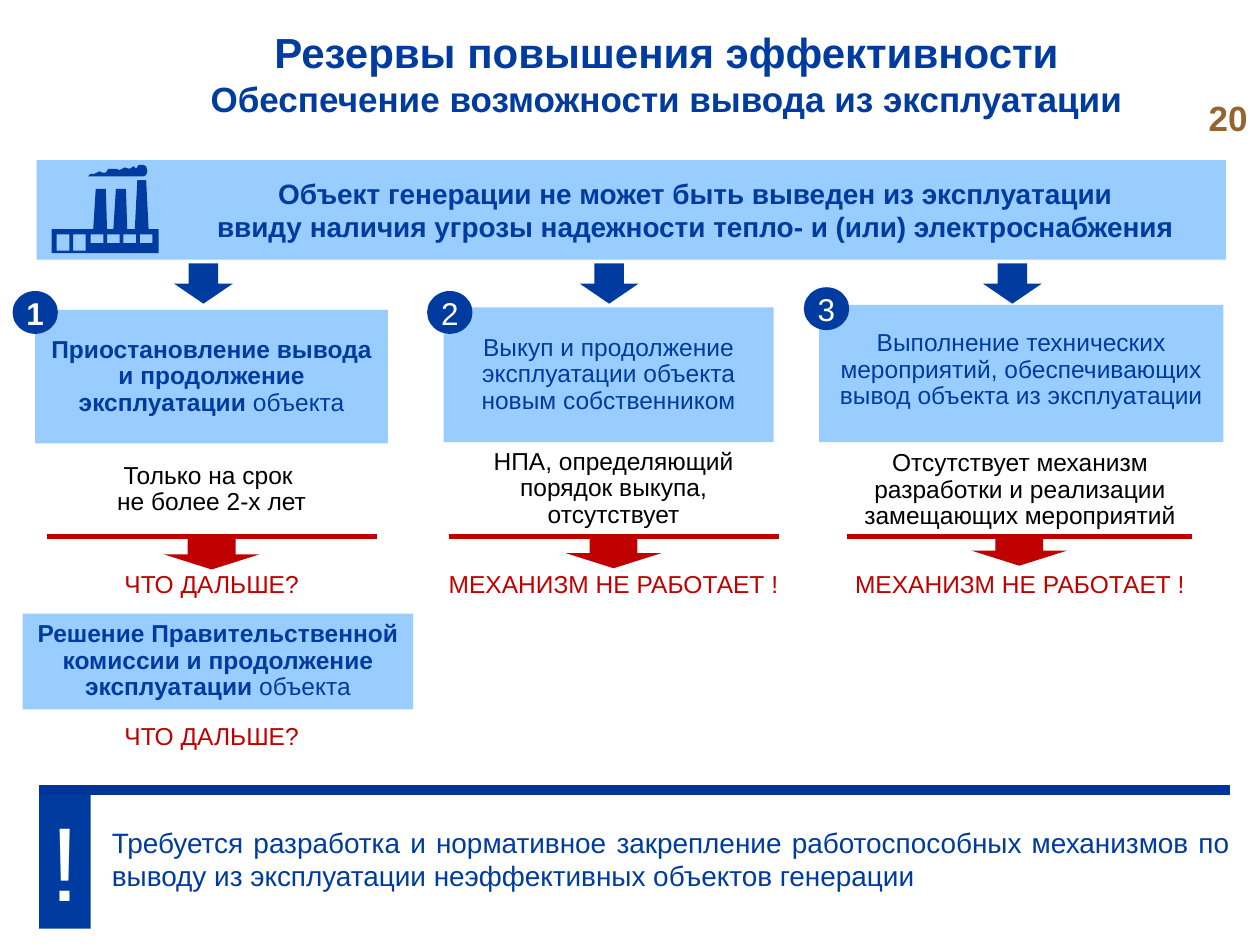
"""Build the slide on reserves for decommissioning generation facilities."""
import pptx
import pptx.dml.color
import pptx.enum.shapes
import pptx.enum.text
import pptx.util
from lxml import etree

Inches = pptx.util.Inches
Shape = pptx.enum.shapes.MSO_SHAPE
Align = pptx.enum.text.PP_ALIGN
Anchor = pptx.enum.text.MSO_ANCHOR

BLUE, SKY, RED, WHITE = "003CA0", "99CCFF", "C00000", "FFFFFF"
TIGHT = (0.08, 0.05, 0.08, 0.05)
NORMAL = (0.1, 0.05, 0.1, 0.05)
NONE = (0, 0, 0, 0)

SMOKE = [
    (98, 140), (114, 140), (116, 139), (117, 136), (116, 132), (114, 131),
    (110, 131), (108, 134), (106, 132), (103, 134), (99, 133), (95, 135),
    (92, 134), (86, 134), (84, 137), (81, 137), (79, 136), (75, 138),
    (72, 138), (70, 140),
]
BUILDING = [
    (41, 182), (74, 182), (76, 150), (84, 150), (85, 182), (90, 182),
    (92, 150), (100, 150), (101, 182), (107, 182), (109, 143), (116, 143),
    (118, 182), (126, 182), (126, 201), (41, 201),
]
WINDOWS = [
    (45, 199), (58, 199), (72, 193), (85, 193), (98, 193), (111, 193),
]


def color(value):
    """Turn a hex string into a colour."""
    return pptx.dml.color.RGBColor.from_string(value)


def write(box, lines, size, ink, bold=False, align=Align.CENTER,
          anchor=Anchor.MIDDLE, insets=TIGHT, spacing=None):
    """Fill a box with paragraphs and return the last one."""
    frame = box.text_frame
    frame.word_wrap = True
    frame.vertical_anchor = anchor
    (frame.margin_left, frame.margin_top,
     frame.margin_right, frame.margin_bottom) = map(Inches, insets)
    for index, line in enumerate(lines):
        para = frame.paragraphs[0] if index == 0 else frame.add_paragraph()
        para.text = line
        para.alignment = align
        if spacing:
            para.line_spacing = spacing
        para.font.name = "Arial"
        para.font.size = pptx.util.Pt(size)
        para.font.bold = bold
        para.font.color.rgb = color(ink)
    return para


def add_filled(page, kind, place, fill):
    """Add a preset shape with a plain fill and no outline."""
    shape = page.shapes.add_shape(kind, *map(Inches, place))
    shape.shadow.inherit = False
    shape.fill.solid()
    shape.fill.fore_color.rgb = color(fill)
    shape.line.fill.background()
    return shape


def add_text(page, place, lines, size, ink, **style):
    """Add a text box and return its last paragraph."""
    box = page.shapes.add_textbox(*map(Inches, place))
    return write(box, lines, size, ink, **style)


def add_panel(page, place, text, size=14, plain_end=None, **style):
    """Add a light blue panel, with an optional ending that is not bold."""
    panel = add_filled(page, Shape.RECTANGLE, place, SKY)
    para = write(panel, [text], size, BLUE, **style)
    if plain_end:
        span = para.add_run()
        span.text = plain_end
        span.font.bold = False


def add_rule(page, left, right, top, ink, width):
    """Add a horizontal line."""
    rule = page.shapes.add_connector(
        pptx.enum.shapes.MSO_CONNECTOR.STRAIGHT,
        Inches(left), Inches(top), Inches(right), Inches(top))
    rule.line.color.rgb = color(ink)
    rule.line.width = pptx.util.Pt(width)
    etree.SubElement(rule.element.spPr, pptx.oxml.ns.qn("a:effectLst"))


def add_badge(page, left, top, number, bold):
    """Add a numbered circle."""
    badge = add_filled(page, Shape.OVAL, (left, top, 0.36, 0.34), BLUE)
    write(badge, [number], 18, WHITE, bold=bold, insets=NONE)


def add_verdict(page, place, text):
    """Add a red conclusion."""
    add_text(page, place, [text], 14, RED, anchor=Anchor.TOP, insets=NORMAL)


def add_plant(page):
    """Draw the power plant, in hundredths of an inch."""
    windows = [[(x, 186), (x + 10, 186), (x + 10, bottom), (x, bottom)]
               for x, bottom in WINDOWS]
    builder = page.shapes.build_freeform(*SMOKE[0], scale=Inches(0.01))
    builder.add_line_segments(SMOKE[1:], close=True)
    for outline in [BUILDING, *windows]:
        builder.move_to(*outline[0])
        builder.add_line_segments(outline[1:], close=True)
    plant = builder.convert_to_shape()
    plant.shadow.inherit = False
    plant.fill.solid()
    plant.fill.fore_color.rgb = color(BLUE)
    plant.line.fill.background()


def add_heading(page):
    """Add the title, the page number and the top band."""
    title = add_text(page, (1.22, 0, 8.14, 1.16),
                     ["Резервы повышения эффективности\v"], 24, BLUE,
                     bold=True, insets=NORMAL)
    span = title.add_run()
    span.text = "Обеспечение возможности вывода из эксплуатации"
    span.font.size = pptx.util.Pt(20)
    add_text(page, (9.37, 0.6, 0.63, 0.55), ["20"], 20, "95642F", bold=True,
             align=Align.RIGHT, anchor=Anchor.BOTTOM, insets=NORMAL)
    add_panel(page, (0.29, 1.27, 9.44, 0.79),
              "Объект генерации не может быть выведен из эксплуатации\v"
              "ввиду наличия угрозы надежности тепло- и (или) "
              "электроснабжения",
              size=16, bold=True, insets=(1.02, 0.05, 0, 0.05))
    add_plant(page)


def add_options(page):
    """Add the three options with their obstacles and verdicts."""
    add_panel(page, (0.28, 2.46, 2.8, 1.06),
              "Приостановление вывода и продолжение эксплуатации ",
              plain_end="объекта", bold=True, spacing=0.9)
    add_panel(page, (3.52, 2.44, 2.62, 1.07),
              "Выкуп и продолжение эксплуатации объекта новым собственником",
              spacing=0.9)
    add_panel(page, (6.5, 2.42, 3.21, 1.09),
              "Выполнение технических мероприятий, обеспечивающих "
              "вывод объекта из эксплуатации",
              insets=(0.08, 0, 0.08, 0.05), spacing=0.9)
    obstacles = [
        ((0.29, 3.51, 2.78, 0.75), ["Только на срок ", "не более 2-х лет"]),
        ((3.56, 3.51, 2.62, 0.74),
         ["НПА, определяющий порядок выкупа, отсутствует"]),
        ((6.5, 3.54, 3.19, 0.7),
         ["Отсутствует механизм разработки и реализации "
          "замещающих мероприятий"]),
    ]
    for place, lines in obstacles:
        add_text(page, place, lines, 14, "000000", spacing=0.9)
    for left, right in [(0.37, 2.99), (3.56, 6.18), (6.72, 9.46)]:
        add_rule(page, left, right, 4.26, RED, 3)
    for left, top in [(1.3, 4.28), (4.49, 4.27), (7.71, 4.25)]:
        add_filled(page, Shape.DOWN_ARROW, (left, top, 0.76, 0.24), RED)
    for left in (1.38, 4.6, 7.8):
        add_filled(page, Shape.DOWN_ARROW, (left, 2.09, 0.47, 0.32), BLUE)
    add_badge(page, 0.1, 2.31, "1", True)
    add_badge(page, 3.39, 2.31, "2", False)
    add_badge(page, 6.38, 2.28, "3", False)
    for top in (4.47, 5.67):
        add_verdict(page, (0.17, top, 3.02, 0.34), "ЧТО ДАЛЬШЕ?")
    for left, width in [(3.4, 2.94), (6.64, 2.91)]:
        add_verdict(page, (left, 4.47, width, 0.34), "МЕХАНИЗМ НЕ РАБОТАЕТ !")
    add_panel(page, (0.18, 4.87, 3.1, 0.76),
              "Решение Правительственной комиссии и продолжение эксплуатации ",
              plain_end="объекта", bold=True, spacing=0.9)


def add_conclusion(page):
    """Add the closing statement with its exclamation mark."""
    mark = add_filled(page, Shape.RECTANGLE, (0.31, 6.27, 0.41, 1.1), BLUE)
    write(mark, ["!"], 60, WHITE, insets=NONE)
    add_rule(page, 0.31, 9.76, 6.27, "003399", 6)
    add_text(page, (0.79, 6.5, 9.07, 0.64),
             ["Требуется разработка и нормативное закрепление "
              "работоспособных механизмов по выводу из эксплуатации "
              "неэффективных объектов генерации"], 16, BLUE,
             align=Align.JUSTIFY, anchor=Anchor.TOP, insets=NORMAL)


def main():
    """Build and save the deck."""
    deck = pptx.Presentation()
    deck.slide_width, deck.slide_height = Inches(10), Inches(7.5)
    page = deck.slides.add_slide(deck.slide_layouts[6])
    add_heading(page)
    add_options(page)
    add_conclusion(page)
    deck.save("out.pptx")


if __name__ == "__main__":
    main()
